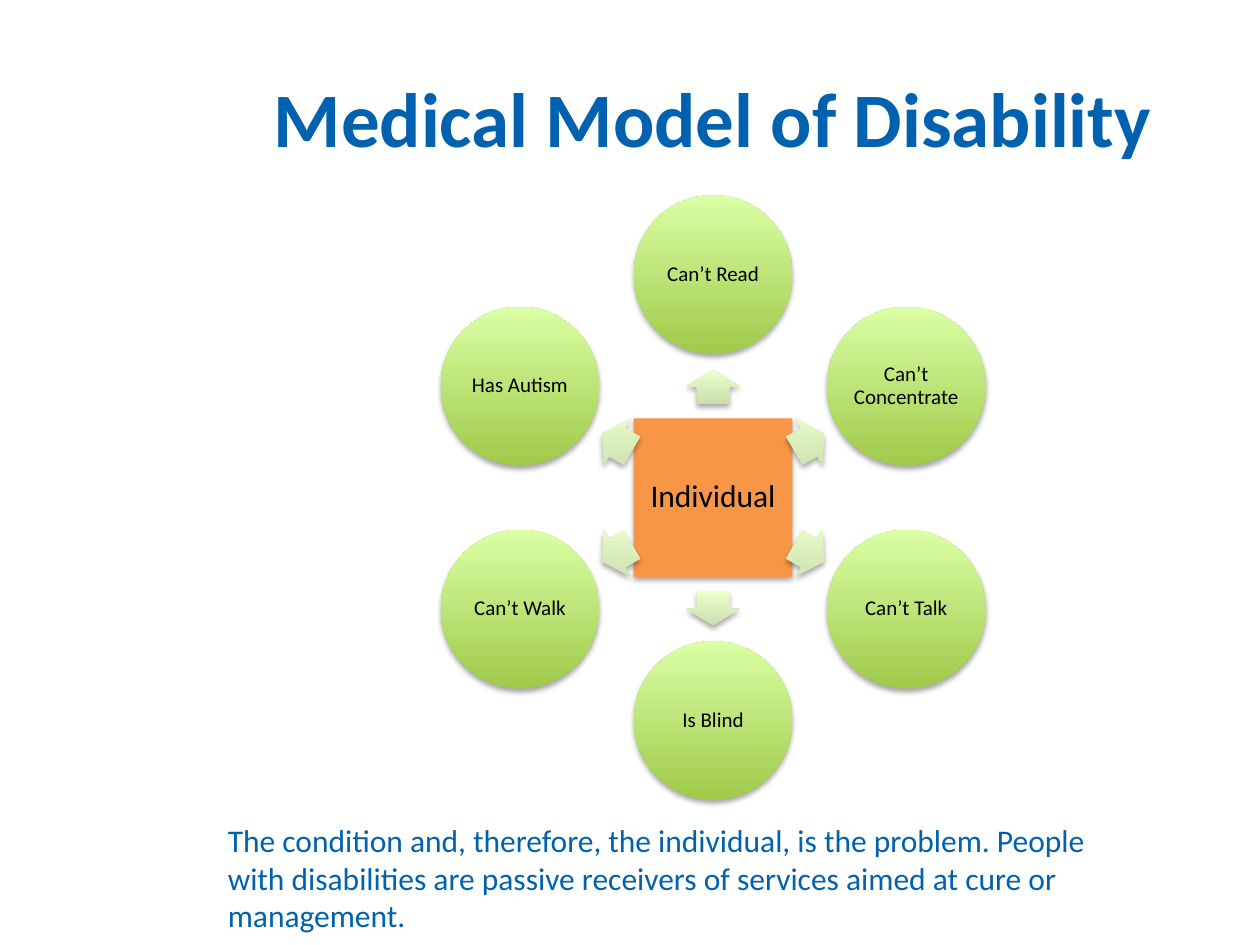
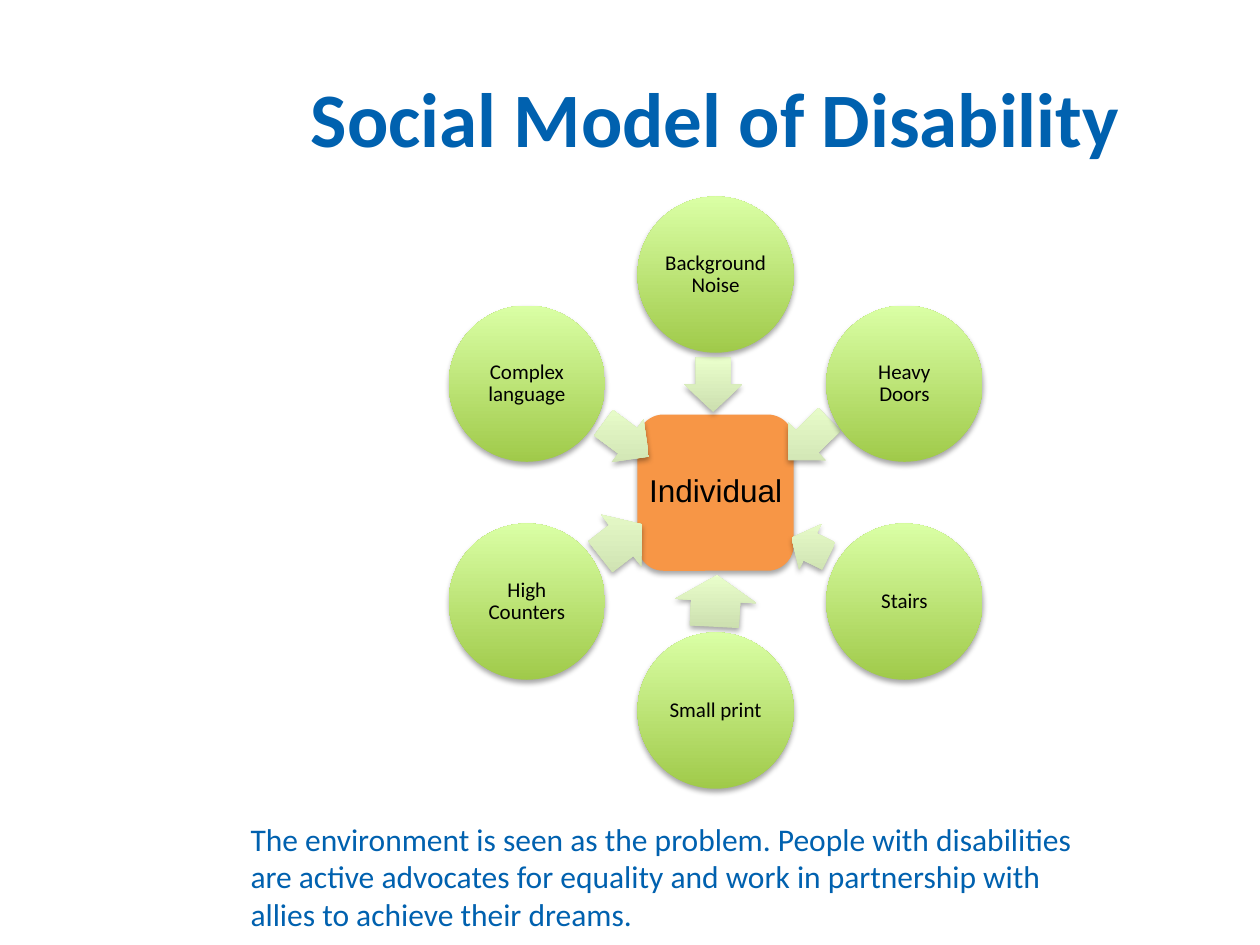
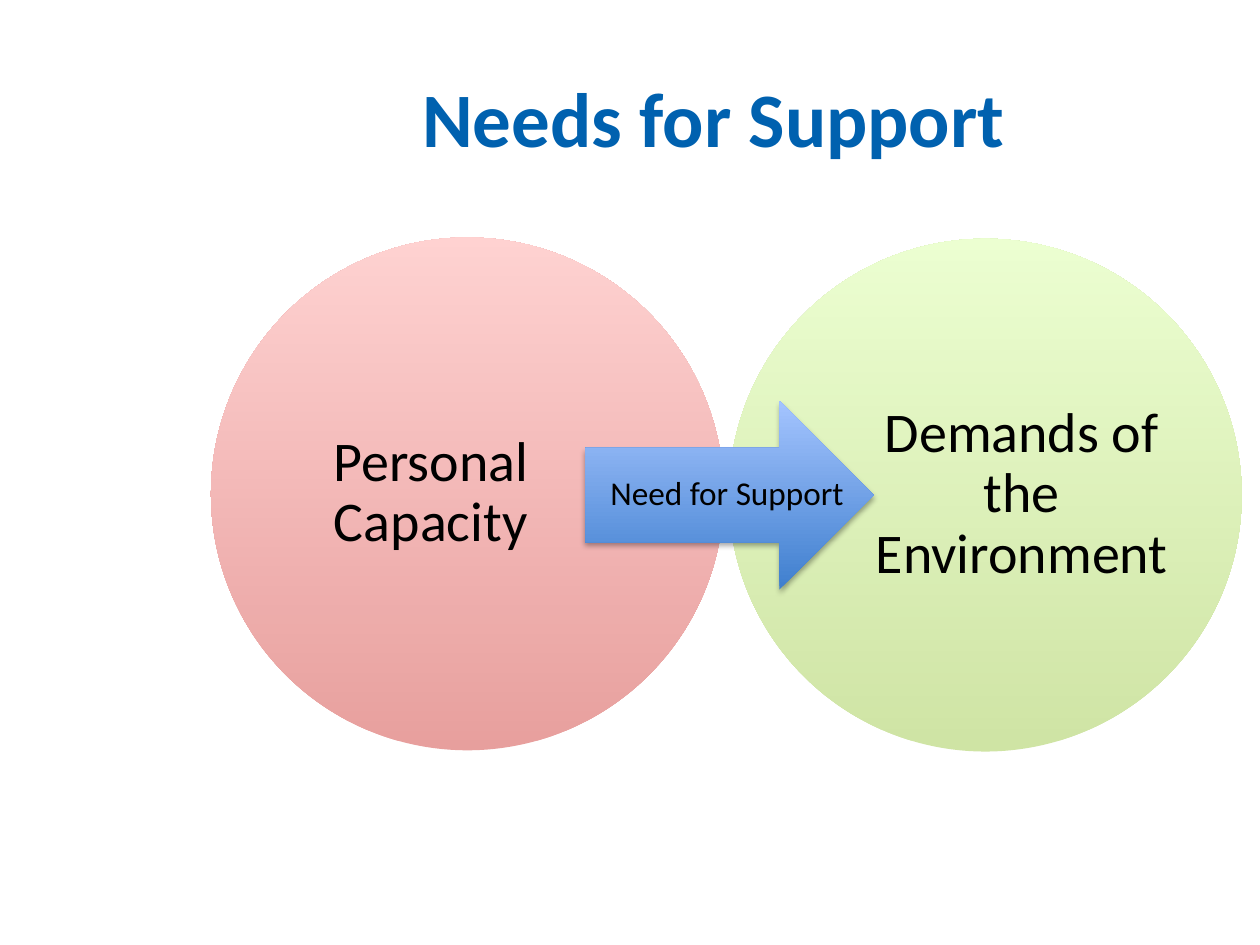
from math import cos, radians, sin

from lxml.etree import SubElement
from pptx import Presentation
from pptx.dml.color import RGBColor
from pptx.enum.shapes import MSO_SHAPE
from pptx.enum.text import MSO_ANCHOR, PP_ALIGN
from pptx.oxml import parse_xml
from pptx.oxml.ns import nsdecls, qn
from pptx.util import Inches, Pt

BLUE, BLACK, ORANGE = "0061AF", "000000", "F79646"
GREEN = ("A0CA4A", "DAFFA5")
PALE_GREEN = ("CCDFAF", "EAFFCC")
RED = ("D1403C", "FFA6A5")
ARROW_BLUE = ("3F7FCE", "A4C4FF")
SHADOW = (
    f'<a:effectLst {nsdecls("a")}><a:outerShdw blurRad="40000" dist="23000" dir="5400000" '
    'rotWithShape="0"><a:srgbClr val="000000"><a:alpha val="35000"/></a:srgbClr>'
    "</a:outerShdw></a:effectLst>"
)


def write(shape, text, size, color=BLACK, font="Calibri", align=PP_ALIGN.CENTER,
          spacing=0.9, margin=0.02, bold=False):
    frame = shape.text_frame
    frame.word_wrap = True
    frame.vertical_anchor = MSO_ANCHOR.MIDDLE
    frame.margin_left = frame.margin_right = Inches(margin)
    frame.margin_top = frame.margin_bottom = Inches(margin / 2)
    frame.text = text
    paragraph = frame.paragraphs[0]
    paragraph.alignment = align
    paragraph.line_spacing = spacing
    paragraph.font.name = font
    paragraph.font.size = Pt(size)
    paragraph.font.bold = bold
    paragraph.font.color.rgb = RGBColor.from_string(color)


def add_figure(slide, kind, center_x, center_y, width, height, colors, rotation=0, opacity=100):
    shape = slide.shapes.add_shape(
        kind, Inches(center_x - width / 2), Inches(center_y - height / 2),
        Inches(width), Inches(height))
    shape.rotation = rotation
    shape.line.fill.background()
    if isinstance(colors, str):
        shape.fill.solid()
        shape.fill.fore_color.rgb = RGBColor.from_string(colors)
    else:
        shape.fill.gradient()
        shape.fill.gradient_angle = 90
        for stop, color in zip(shape.fill.gradient_stops, colors):
            stop.color.rgb = RGBColor.from_string(color)
        gradient = shape._element.spPr.find(qn("a:gradFill"))
        gradient.set("rotWithShape", "0")
        if opacity < 100:
            for color in gradient.iter(qn("a:srgbClr")):
                SubElement(color, qn("a:alpha")).set("val", str(opacity * 1000))
    if opacity < 100:
        shape.shadow.inherit = False
    else:
        shape._element.spPr.append(parse_xml(SHADOW))
    return shape


presentation = Presentation()
presentation.slide_width = Inches(10)
presentation.slide_height = Inches(7.5)

slides = []
for title, left in [("Medical Model of Disability", 1.82),
                    ("Social Model of Disability", 1.86),
                    ("Needs for Support", 1.83)]:
    slide = presentation.slides.add_slide(presentation.slide_layouts[5])
    heading = slide.shapes.title
    heading.left, heading.top = Inches(left), Inches(0.3)
    heading.width, heading.height = Inches(9.5 - left), Inches(1.25)
    write(heading, title, 44, BLUE, spacing=1, margin=0.1, bold=True)
    slides.append(slide)

angles = range(-90, 270, 60)
outward_arrows = [
    (5.66 + 0.88 * cos(radians(angle)), 3.95 + 0.88 * sin(radians(angle)), 0.27, 0.43, angle % 360)
    for angle in angles
]
inward_arrows = [
    (5.66, 3.05, 0.44, 0.46, 90), (6.42, 3.49, 0.46, 0.42, 135.4),
    (6.43, 4.34, 0.33, 0.4, 206.1), (5.68, 4.77, 0.41, 0.65, 273.1),
    (4.93, 4.29, 0.42, 0.52, 322.1), (4.97, 3.49, 0.45, 0.42, 36.7),
]
models = [
    (MSO_SHAPE.RECTANGLE, "Calibri", 5.66, 3.95, 1.26, 1.77, outward_arrows,
     ["Can’t Read", "Can’t Concentrate", "Can’t Talk", "Is Blind", "Can’t Walk", "Has Autism"],
     (1.71, 6.46, 7.24),
     "The condition and, therefore, the individual, is the problem. People with disabilities "
     "are passive receivers of services aimed at cure or management."),
    (MSO_SHAPE.ROUNDED_RECTANGLE, "Arial", 5.68, 3.91, 1.24, 1.73, inward_arrows,
     ["Background Noise", "Heavy Doors", "Stairs", "Small print", "High Counters",
      "Complex language"],
     (1.89, 6.45, 6.9),
     "The environment is seen as the problem. People with disabilities are active advocates "
     "for equality and work in partnership with allies to achieve their dreams."),
]
for slide, model in zip(slides, models):
    hub_kind, hub_font, hub_x, hub_y, size, radius, arrows, labels, place, caption = model
    hub = add_figure(slide, hub_kind, hub_x, hub_y, size, size, ORANGE)
    write(hub, "Individual", 18, font=hub_font)
    for angle, arrow, label in zip(angles, arrows, labels):
        x, y, width, height, rotation = arrow
        pointer = add_figure(slide, MSO_SHAPE.RIGHT_ARROW, x, y, width, height,
                             PALE_GREEN, rotation)
        pointer.adjustments[0] = 0.6
        circle = add_figure(slide, MSO_SHAPE.OVAL, hub_x + radius * cos(radians(angle)),
                            hub_y + radius * sin(radians(angle)), size, size, GREEN)
        write(circle, label, 12)
    left, top, width = place
    note = slide.shapes.add_textbox(Inches(left), Inches(top), Inches(width), Inches(1.01))
    write(note, caption, 18, BLUE, align=PP_ALIGN.LEFT, spacing=1, margin=0.1)

support = slides[2]
add_figure(support, MSO_SHAPE.OVAL, 3.71, 3.92, 4.07, 4.07, RED, opacity=50)
add_figure(support, MSO_SHAPE.OVAL, 7.82, 3.93, 4.07, 4.07, GREEN, opacity=50)
add_figure(support, MSO_SHAPE.RIGHT_ARROW, 5.79, 3.93, 2.29, 1.5, ARROW_BLUE)
for text, size, left, top, width, height in [
    ("Personal Capacity", 32, 2.25, 2.36, 2.34, 3.11),
    ("Demands of the Environment", 32, 6.94, 2.37, 2.34, 3.11),
    ("Need for Support", 19, 4.83, 3.55, 1.88, 0.75),
]:
    label = support.shapes.add_textbox(Inches(left), Inches(top), Inches(width), Inches(height))
    write(label, text, size, margin=0)

presentation.save("out.pptx")
